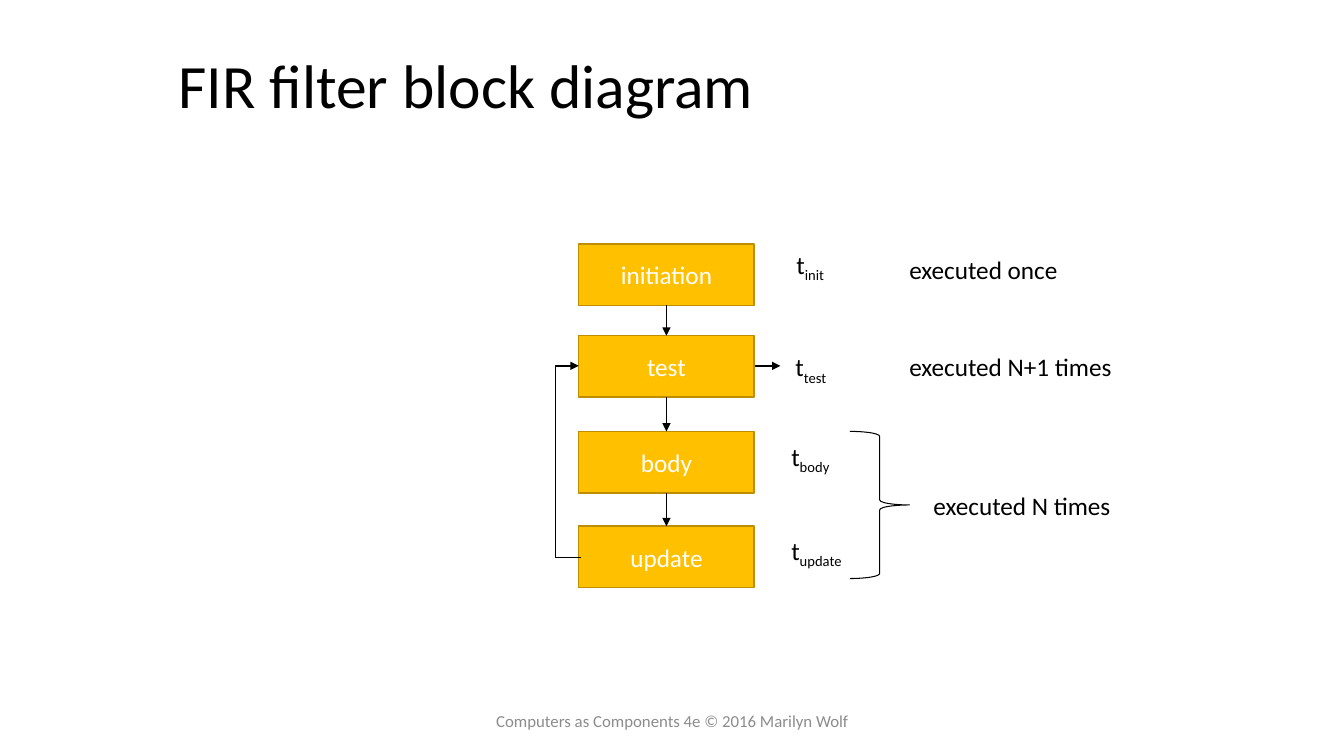
from lxml import etree
from pptx import Presentation
from pptx.dml.color import RGBColor
from pptx.enum.shapes import MSO_CONNECTOR as Connector, MSO_SHAPE as Shape
from pptx.enum.text import MSO_ANCHOR as Anchor, MSO_AUTO_SIZE as AutoSize, PP_ALIGN as Align
from pptx.oxml.ns import qn
from pptx.util import Inches, Pt

BLACK = RGBColor(0x00, 0x00, 0x00)
WHITE = RGBColor(0xFF, 0xFF, 0xFF)
GOLD = RGBColor(0xFF, 0xC0, 0x00)
DARK_GOLD = RGBColor(0xBD, 0x8E, 0x00)
GRAY = RGBColor(0x8C, 0x8C, 0x8C)

BOX_LEFT, BOX_WIDTH, BOX_HEIGHT = 5.74, 1.74, 0.61
TEXT_HEIGHT = 0.4
TOP, LEFT, BOTTOM = 0, 1, 2

# Step name and top of its box
STEPS = [("initiation", 2.42), ("test", 3.33), ("body", 4.28), ("update", 5.22)]

# Subscript, left, top, width
TIMES = [
    ("init", 7.8, 2.42, 0.51),
    ("test", 7.79, 3.44, 0.54),
    ("body", 7.75, 4.33, 0.63),
    ("update", 7.75, 5.26, 0.77),
]

# Text, left, top, width
COUNTS = [
    ("executed once", 8.92, 2.47, 1.69),
    ("executed N+1 times", 8.92, 3.44, 2.23),
    ("executed N times", 9.16, 4.82, 1.98),
]


def add_run(paragraph, text, size=18, color=BLACK):
    run = paragraph.add_run()
    run.text = text
    for name, value in {"name": "Calibri", "size": Pt(size)}.items():
        setattr(run.font, name, value)
    run.font.color.rgb = color
    return run


def format_frame(frame, **values):
    for name, value in values.items():
        setattr(frame, name, value)


def set_line(shape, color=BLACK, width=1):
    shape.line.color.rgb = color
    shape.line.width = Pt(width)


def add_title(slide, text):
    title = slide.shapes.title
    place = {"left": 1.67, "top": 0.25, "width": 8.5, "height": 1.25}
    for name, value in place.items():
        setattr(title, name, Inches(value))
    format_frame(title.text_frame, vertical_anchor=Anchor.MIDDLE,
                 word_wrap=True, auto_size=AutoSize.NONE)
    paragraph = title.text_frame.paragraphs[0]
    paragraph.alignment = Align.LEFT
    paragraph.line_spacing = 0.9
    add_run(paragraph, text, 44)


def add_step(slide, name, top):
    box = slide.shapes.add_shape(Shape.RECTANGLE, Inches(BOX_LEFT), Inches(top),
                                 Inches(BOX_WIDTH), Inches(BOX_HEIGHT))
    box.shadow.inherit = False
    box.fill.solid()
    box.fill.fore_color.rgb = GOLD
    set_line(box, DARK_GOLD)
    format_frame(box.text_frame, vertical_anchor=Anchor.MIDDLE)
    paragraph = box.text_frame.paragraphs[0]
    paragraph.alignment = Align.CENTER
    add_run(paragraph, name, color=WHITE)
    return box


def add_label(slide, left, top, width):
    label = slide.shapes.add_textbox(Inches(left), Inches(top),
                                     Inches(width), Inches(TEXT_HEIGHT))
    format_frame(label.text_frame, word_wrap=False,
                 auto_size=AutoSize.SHAPE_TO_FIT_TEXT)
    return label.text_frame.paragraphs[0]


def add_time(slide, subscript, left, top, width):
    paragraph = add_label(slide, left, top, width)
    add_run(paragraph, "t")
    run = add_run(paragraph, subscript)
    run.font._element.set("baseline", "-25000")


def add_arrow(slide, start=(0, 0), end=(0, 0), kind=Connector.STRAIGHT):
    arrow = slide.shapes.add_connector(kind, *map(Inches, start + end))
    set_line(arrow)
    etree.SubElement(arrow.line._get_or_add_ln(), qn("a:tailEnd"), type="triangle")
    etree.SubElement(arrow._element.spPr, qn("a:effectLst"))
    return arrow


def add_loop_back(slide, start, end, bend):
    arrow = add_arrow(slide, start, end, Connector.ELBOW)
    geometry = arrow._element.spPr.find(qn("a:prstGeom"))
    guides = geometry.find(qn("a:avLst"))
    share = (start[0] - bend) / (start[0] - end[0])
    etree.SubElement(guides, qn("a:gd"), name="adj1",
                     fmla=f"val {round(share * 100000)}")


def add_brace(slide):
    brace = slide.shapes.add_shape(Shape.RIGHT_BRACE, Inches(8.43), Inches(4.28),
                                   Inches(0.59), Inches(1.46))
    brace.shadow.inherit = False
    brace.fill.background()
    set_line(brace, width=0.75)


def add_footer(slide, text):
    footer = slide.shapes.add_textbox(Inches(4.42), Inches(6.95),
                                      Inches(4.5), Inches(TEXT_HEIGHT))
    format_frame(footer.text_frame, word_wrap=True, vertical_anchor=Anchor.MIDDLE)
    paragraph = footer.text_frame.paragraphs[0]
    paragraph.alignment = Align.CENTER
    add_run(paragraph, text, 12, GRAY)


def main():
    presentation = Presentation()
    presentation.slide_width = Inches(13.33)
    presentation.slide_height = Inches(7.5)
    slide = presentation.slides.add_slide(presentation.slide_layouts[5])
    add_title(slide, "FIR filter block diagram")

    # Steps and the arrows between them
    boxes = [add_step(slide, name, top) for name, top in STEPS]
    for upper, lower in zip(boxes, boxes[1:]):
        arrow = add_arrow(slide)
        arrow.begin_connect(upper, BOTTOM)
        arrow.end_connect(lower, TOP)

    # Loop from update back to test, and the exit from test
    add_loop_back(slide, (5.76, 5.53), (5.74, 3.63), bend=5.51)
    add_arrow(slide, (7.49, 3.63), (7.74, 3.63))

    # Times and execution counts
    for time in TIMES:
        add_time(slide, *time)
    for text, *place in COUNTS:
        add_run(add_label(slide, *place), text)
    add_brace(slide)

    add_footer(slide, "Computers as Components 4e © 2016 Marilyn Wolf")
    presentation.save("out.pptx")


if __name__ == "__main__":
    main()
